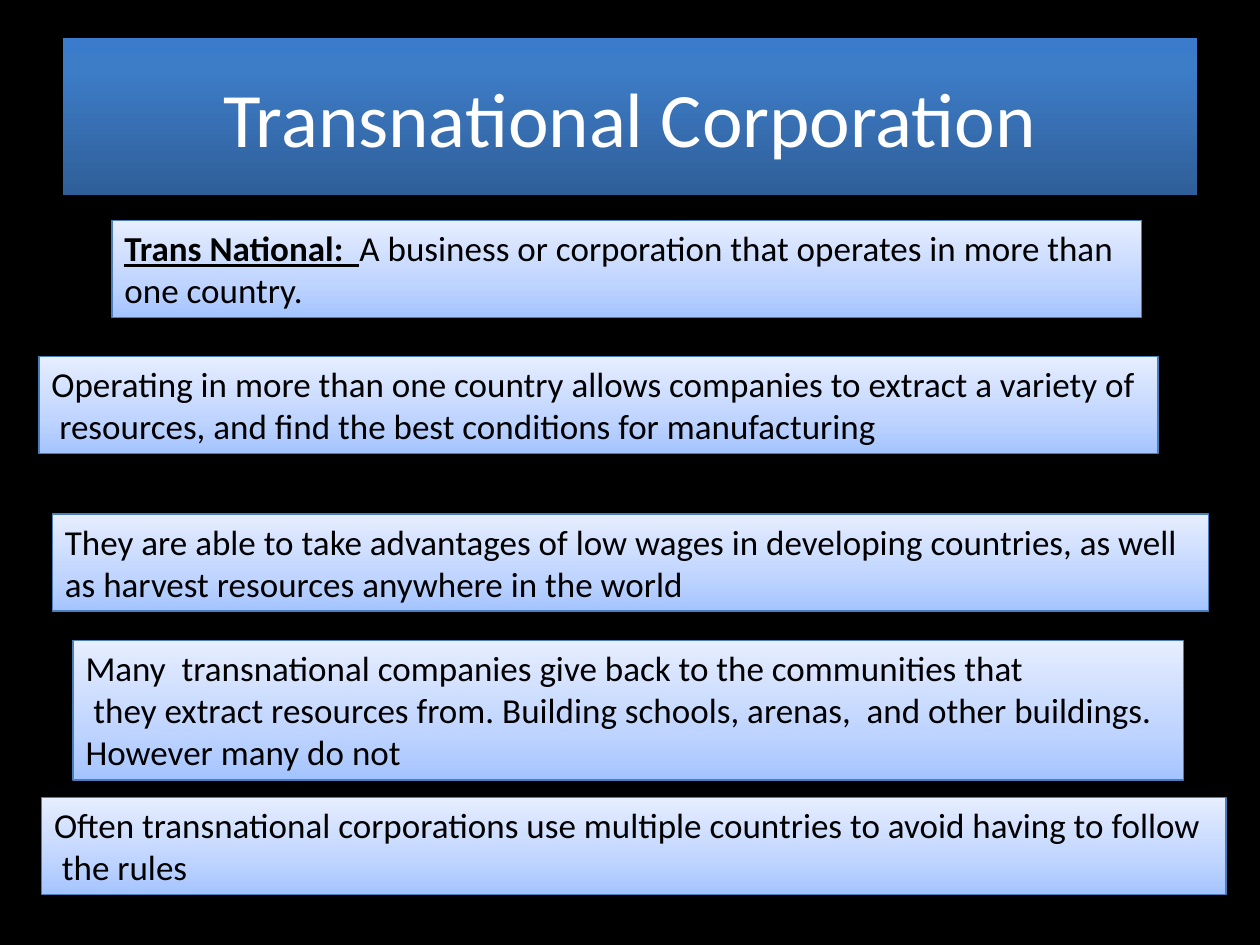
import copy
import pptx
import pptx.util
import pptx.dml.color
import pptx.enum.text
import pptx.oxml.ns

Pt = pptx.util.Pt
RGB = pptx.dml.color.RGBColor
BLACK = RGB(0, 0, 0)
WHITE = RGB(255, 255, 255)
EDGE = RGB(0x4B, 0x7E, 0xBC)
DEEP = [(0, RGB(0x2F, 0x5F, 0x99)), (0.8, RGB(0x3D, 0x7C, 0xC7)),
        (1, RGB(0x3A, 0x7C, 0xCB))]
PALE = [(0, RGB(0xA4, 0xC4, 0xFF)), (0.35, RGB(0xBF, 0xD4, 0xFF)),
        (1, RGB(0xE6, 0xEE, 0xFF))]
FONT = "Calibri"
TITLE = "Transnational Corporation"
TERM = "Trans National:  "
NOTES = [
    ((64, 126, 588.5, 55.4),
     ["A business or corporation that operates in more than one country."]),
    ((22.3, 203.8, 639.5, 55.4),
     ["Operating in more than one country allows companies to extract a variety of",
      " resources, and find the best conditions for manufacturing"]),
    ((30, 293.8, 660.5, 55.4),
     ["They are able to take advantages of low wages in developing countries, as well",
      "as harvest resources anywhere in the world"]),
    ((41.8, 365.8, 634.5, 79.9),
     ["Many  transnational companies give back to the communities that",
      " they extract resources from. Building schools, arenas,  and other buildings.",
      "However many do not"]),
    ((23.8, 455.8, 676.8, 55.4),
     ["Often transnational corporations use multiple countries to avoid having to follow",
      " the rules"]),
]


def shade(shape, stops):
    """Fill a shape with a vertical gradient whose first stop is at the bottom."""
    fill = shape.fill
    fill.gradient()
    fill.gradient_angle = 90
    ramp = shape.element.spPr.find(".//" + pptx.oxml.ns.qn("a:gsLst"))
    ramp.append(copy.deepcopy(ramp[-1]))
    for stop, (place, color) in zip(fill.gradient_stops, stops):
        stop.position = place
        stop.color.rgb = color


def style(par, size, color):
    """Set the font of a paragraph."""
    par.font.name = FONT
    par.font.size = Pt(size)
    par.font.color.rgb = color


def add_title(slide, box):
    """Place the title banner in the given box."""
    title = slide.shapes.title
    title.left, title.top, title.width, title.height = map(Pt, box)
    shade(title, DEEP)
    title.shadow.inherit = False
    frame = title.text_frame
    frame.text = TITLE
    frame.vertical_anchor = pptx.enum.text.MSO_ANCHOR.MIDDLE
    par = frame.paragraphs[0]
    par.alignment = pptx.enum.text.PP_ALIGN.CENTER
    style(par, 44, WHITE)


def add_note(slide, box, lines, term=None):
    """Place a note in the given box, led by an underlined term if any."""
    note = slide.shapes.add_textbox(*map(Pt, box))
    shade(note, PALE)
    note.line.color.rgb = EDGE
    note.line.width = Pt(0.75)
    frame = note.text_frame
    frame.word_wrap = term is not None
    frame.auto_size = pptx.enum.text.MSO_AUTO_SIZE.SHAPE_TO_FIT_TEXT
    for index, line in enumerate(lines):
        par = frame.add_paragraph() if index else frame.paragraphs[0]
        style(par, 20, BLACK)
        if term and not index:
            lead = par.add_run()
            lead.text = term
            lead.font.bold = lead.font.underline = True
        par.add_run().text = line


def main():
    """Build and save the slide."""
    deck = pptx.Presentation()
    deck.slide_width, deck.slide_height = Pt(720), Pt(540)
    slide = deck.slides.add_slide(deck.slide_layouts[5])
    back = slide.background.fill
    back.solid()
    back.fore_color.rgb = BLACK
    add_title(slide, (36, 21.6, 648, 90))
    for index, (box, lines) in enumerate(NOTES):
        add_note(slide, box, lines, None if index else TERM)
    deck.save("out.pptx")


if __name__ == "__main__":
    main()
